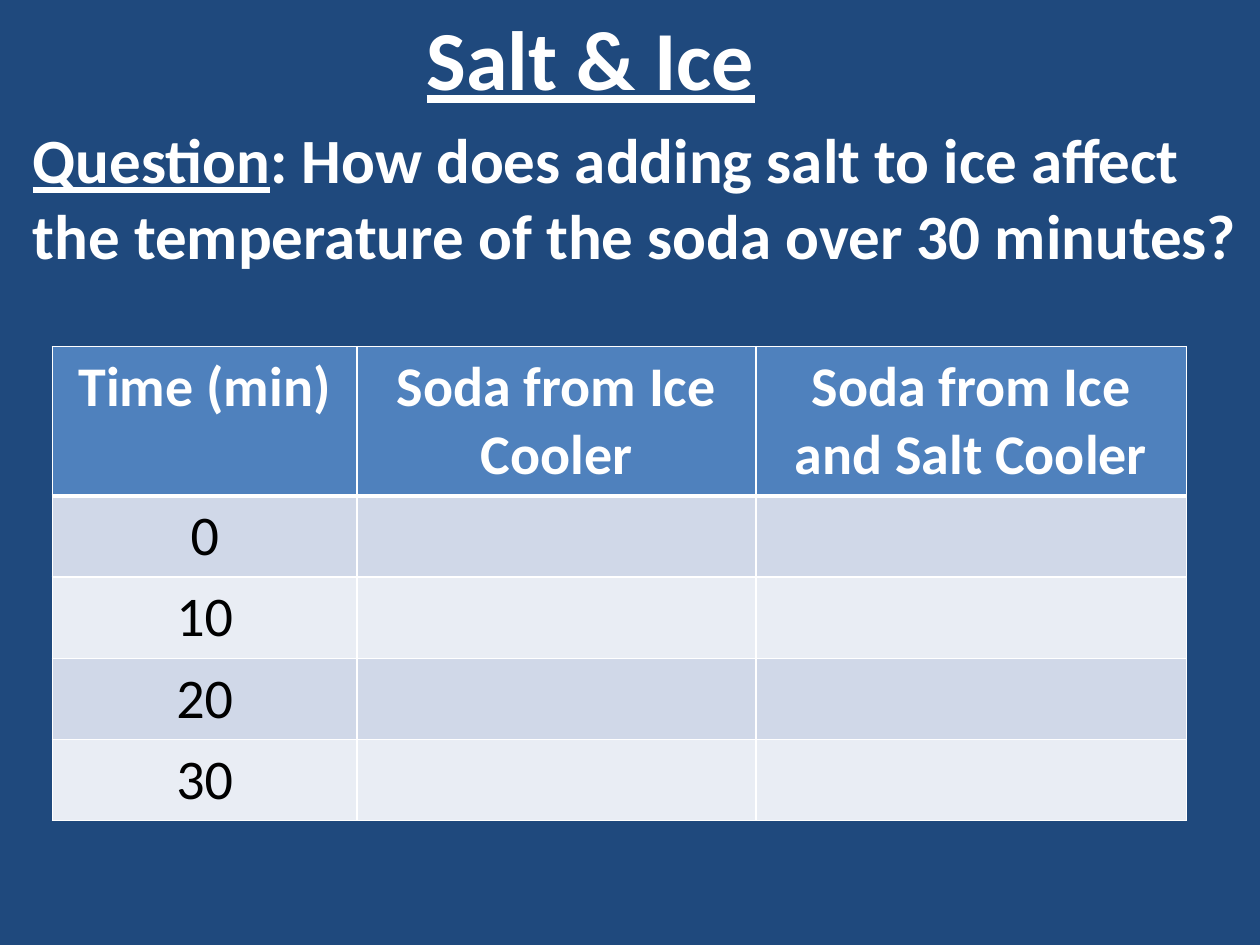
from dataclasses import dataclass

import pptx
import pptx.dml.color
import pptx.enum.text
import pptx.oxml
import pptx.oxml.ns
import pptx.util

Pt = pptx.util.Pt
CENTER = pptx.enum.text.PP_ALIGN.CENTER
LEFT = pptx.enum.text.PP_ALIGN.LEFT

COLOURS = {
    "background": "1F497D",
    "header": "4F81BD",
    "odd_row": "D0D8E8",
    "even_row": "E9EDF4",
    "light": "FFFFFF",
    "dark": "000000",
}


@dataclass
class Run:
    text: str
    size: float
    colour: str = "light"
    bold: bool = True
    underline: bool = False


@dataclass
class TextBlock:
    left: float
    top: float
    width: float
    height: float
    align: pptx.enum.text.PP_ALIGN
    runs: list[Run]


TEXT_BLOCKS = [
    TextBlock(11.5, 65.5, 708, 94.5, LEFT, [
        Run("Question", 36, underline=True),
        Run(": How does adding salt to ice affect the temperature"
            " of the soda over 30 minutes?", 36),
    ]),
    TextBlock(163.5, 0, 348, 65.5, CENTER,
              [Run("Salt & Ice", 48, underline=True)]),
]

# Temperature table
TABLE_LEFT, TABLE_TOP = 30, 198
COLUMN_WIDTHS = [174, 228, 246]
HEADER_HEIGHT, ROW_HEIGHT = 85, 46.4
HEADINGS = ["Time (min)", "Soda from Ice Cooler", "Soda from Ice and Salt Cooler"]
MINUTES = range(0, 31, 10)
TABLE_TEXT_SIZE = 32


def rgb(colour: str) -> pptx.dml.color.RGBColor:
    return pptx.dml.color.RGBColor.from_string(COLOURS[colour])


def write_runs(paragraph, runs: list[Run], align) -> None:
    paragraph.alignment = align
    for run in runs:
        piece = paragraph.add_run()
        piece.text = run.text
        font_format = {"name": "Calibri", "size": Pt(run.size),
                       "bold": run.bold, "underline": run.underline}
        for attribute, value in font_format.items():
            setattr(piece.font, attribute, value)
        piece.font.color.rgb = rgb(run.colour)


def draw_text(slide, block: TextBlock) -> None:
    box = slide.shapes.add_textbox(
        Pt(block.left), Pt(block.top), Pt(block.width), Pt(block.height))
    frame_format = {"word_wrap": True,
                    "auto_size": pptx.enum.text.MSO_AUTO_SIZE.SHAPE_TO_FIT_TEXT}
    for attribute, value in frame_format.items():
        setattr(box.text_frame, attribute, value)
    write_runs(box.text_frame.paragraphs[0], block.runs, block.align)


def draw_borders(cell, widths: dict[str, float]) -> None:
    properties = cell._tc.get_or_add_tcPr()
    for side, width in widths.items():
        properties.append(pptx.oxml.parse_xml(
            f'<a:ln{side} {pptx.oxml.ns.nsdecls("a")} w="{Pt(width)}">'
            f'<a:solidFill><a:srgbClr val="{COLOURS["light"]}"/></a:solidFill>'
            f'</a:ln{side}>'))


def draw_table(slide) -> None:
    rows = [HEADINGS] + [[str(minute), "", ""] for minute in MINUTES]
    heights = [HEADER_HEIGHT] + [ROW_HEIGHT] * len(MINUTES)
    table = slide.shapes.add_table(
        len(rows), len(HEADINGS), Pt(TABLE_LEFT), Pt(TABLE_TOP),
        Pt(sum(COLUMN_WIDTHS)), Pt(sum(heights))).table
    for column, width in zip(table.columns, COLUMN_WIDTHS):
        column.width = Pt(width)
    for row_index, (texts, height) in enumerate(zip(rows, heights)):
        table.rows[row_index].height = Pt(height)
        is_header = row_index == 0
        band = "header" if is_header else "odd_row" if row_index % 2 else "even_row"
        # The rule under the header is heavier than the rest
        borders = {"L": 1, "R": 1, "T": 3 if row_index == 1 else 1,
                   "B": 3 if is_header else 1}
        for column_index, text in enumerate(texts):
            cell = table.cell(row_index, column_index)
            draw_borders(cell, borders)
            cell.fill.solid()
            cell.fill.fore_color.rgb = rgb(band)
            if text:
                label = Run(text, TABLE_TEXT_SIZE,
                            "light" if is_header else "dark", is_header)
                write_runs(cell.text_frame.paragraphs[0], [label], CENTER)


def main() -> None:
    deck = pptx.Presentation()
    deck.slide_width, deck.slide_height = Pt(720), Pt(540)
    slide = deck.slides.add_slide(deck.slide_layouts[6])
    slide.background.fill.solid()
    slide.background.fill.fore_color.rgb = rgb("background")

    draw_table(slide)
    # Question and title
    for block in TEXT_BLOCKS:
        draw_text(slide, block)
    deck.save("out.pptx")


if __name__ == "__main__":
    main()
